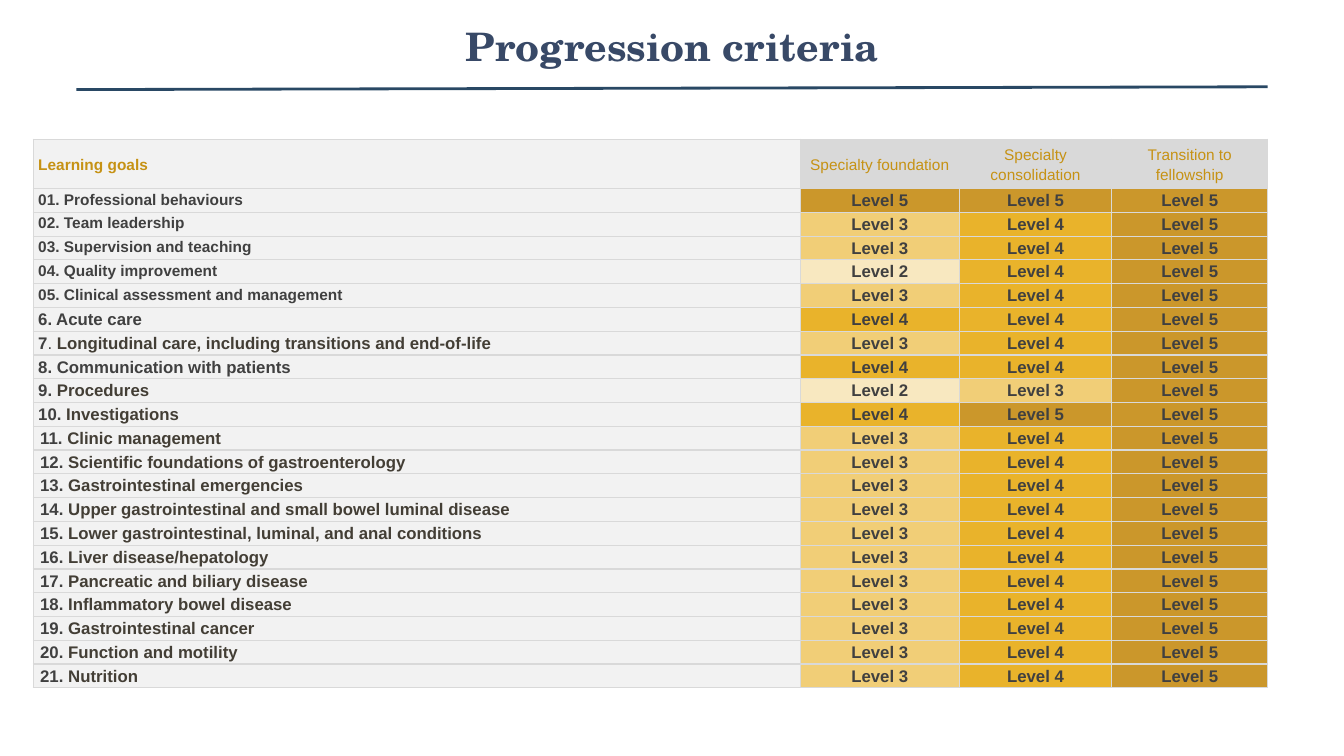
import dataclasses

import pptx
import pptx.dml.color
import pptx.enum.shapes
import pptx.enum.text
import pptx.oxml.ns
import pptx.util
from lxml import etree

Pt = pptx.util.Pt
ALIGN = pptx.enum.text.PP_ALIGN
ANCHOR = pptx.enum.text.MSO_ANCHOR
qn = pptx.oxml.ns.qn


@dataclasses.dataclass(frozen=True)
class Theme:
    title_font: str = "TeX Gyre Schola"
    body_font: str = "Arial"
    title_size: int = 28
    small_size: int = 11
    body_size: int = 12
    title: str = "384967"
    rule: str = "294864"
    gold: str = "C69214"
    dark: str = "404040"
    brown: str = "433E35"
    goal_fill: str = "F2F2F2"
    grey: str = "D9D9D9"
    level_fills: tuple = (None, None, "F8E8C0", "F1CE77", "E9B32B", "CB972B")


THEME = Theme()

STAGES = ["Specialty foundation", "Specialty consolidation", "Transition to fellowship"]
COLUMN_WIDTHS = [547.9, 113.8, 108.7, 111.6]
HEADER_HEIGHT = 35.3
ROW_HEIGHT = 17

GOALS = [
    ("01.", "Professional behaviours", (5, 5, 5)),
    ("02.", "Team leadership", (3, 4, 5)),
    ("03.", "Supervision and teaching", (3, 4, 5)),
    ("04.", "Quality improvement", (2, 4, 5)),
    ("05.", "Clinical assessment and management", (3, 4, 5)),
    ("6.", "Acute care", (4, 4, 5)),
    ("7.", "Longitudinal care, including transitions and end-of-life", (3, 4, 5)),
    ("8.", "Communication with patients", (4, 4, 5)),
    ("9.", "Procedures", (2, 3, 5)),
    ("10.", "Investigations", (4, 5, 5)),
    ("11.", "Clinic management", (3, 4, 5)),
    ("12.", "Scientific foundations of gastroenterology", (3, 4, 5)),
    ("13.", "Gastrointestinal emergencies", (3, 4, 5)),
    ("14.", "Upper gastrointestinal and small bowel luminal disease", (3, 4, 5)),
    ("15.", "Lower gastrointestinal, luminal, and anal conditions", (3, 4, 5)),
    ("16.", "Liver disease/hepatology", (3, 4, 5)),
    ("17.", "Pancreatic and biliary disease", (3, 4, 5)),
    ("18.", "Inflammatory bowel disease", (3, 4, 5)),
    ("19.", "Gastrointestinal cancer", (3, 4, 5)),
    ("20.", "Function and motility", (3, 4, 5)),
    ("21.", "Nutrition", (3, 4, 5)),
]


def rgb(value):
    return pptx.dml.color.RGBColor.from_string(value)


def style_font(font, name, size, bold):
    font.name = name
    font.size = Pt(size)
    font.bold = bold


def add_title(slide, text):
    title = slide.shapes.add_textbox(Pt(156), Pt(12.5), Pt(648), Pt(90))
    title.text_frame.word_wrap = True
    paragraph = title.text_frame.paragraphs[0]
    paragraph.text = text
    paragraph.alignment = ALIGN.CENTER
    style_font(paragraph.font, THEME.title_font, THEME.title_size, True)
    paragraph.font.color.rgb = rgb(THEME.title)


def add_rule(slide):
    rule = slide.shapes.add_connector(
        pptx.enum.shapes.MSO_CONNECTOR.STRAIGHT, Pt(54.5), Pt(64), Pt(905.5), Pt(62)
    )
    rule.line.color.rgb = rgb(THEME.rule)
    rule.line.width = Pt(2)
    etree.SubElement(rule._element.spPr, qn("a:effectLst"))


def add_borders(cell):
    properties = cell._tc.get_or_add_tcPr()
    for side in ("a:lnL", "a:lnR", "a:lnT", "a:lnB"):
        border = etree.SubElement(properties, qn(side), w=str(Pt(1)))
        fill = etree.SubElement(border, qn("a:solidFill"))
        etree.SubElement(fill, qn("a:srgbClr"), val=THEME.grey)


def fill_cell(cell, fill, parts, size, bold=True, align=ALIGN.LEFT,
              anchor=ANCHOR.TOP, inset=3.6):
    add_borders(cell)
    cell.fill.solid()
    cell.fill.fore_color.rgb = rgb(fill)
    cell.margin_left = cell.margin_right = Pt(inset)
    cell.margin_top = cell.margin_bottom = Pt(0)
    cell.vertical_anchor = anchor
    paragraph = cell.text_frame.paragraphs[0]
    paragraph.alignment = align
    paragraph.line_spacing = 1.15
    style_font(paragraph.font, THEME.body_font, size, bold)
    for text, color in parts:
        run = paragraph.add_run()
        run.text = text
        run.font.color.rgb = rgb(color)
    return paragraph


def fill_header(table):
    fill_cell(table.cell(0, 0), THEME.goal_fill, [("Learning goals", THEME.gold)],
              THEME.small_size, anchor=ANCHOR.MIDDLE)
    for column, stage in enumerate(STAGES, 1):
        fill_cell(table.cell(0, column), THEME.grey, [(stage, THEME.gold)],
                  THEME.small_size, False, ALIGN.CENTER, ANCHOR.MIDDLE)


def fill_goal(table, row, number, goal, levels):
    size = THEME.small_size if row <= 5 else THEME.body_size
    goal_color = THEME.brown if row == 7 or row >= 9 else THEME.dark
    inset = 5 if row >= 11 else 3.6
    if row == 7:
        parts = [("7", THEME.dark), (". ", THEME.dark), (goal, goal_color)]
    else:
        parts = [(number + " ", THEME.dark), (goal, goal_color)]
    paragraph = fill_cell(table.cell(row, 0), THEME.goal_fill, parts, size, inset=inset)
    if row == 7:
        paragraph.runs[1].font.bold = False
    for column, level in enumerate(levels, 1):
        fill_cell(table.cell(row, column), THEME.level_fills[level],
                  [(f"Level {level}", THEME.dark)], THEME.body_size, align=ALIGN.CENTER)


def add_criteria(slide):
    height = HEADER_HEIGHT + ROW_HEIGHT * len(GOALS)
    table = slide.shapes.add_table(
        len(GOALS) + 1, len(COLUMN_WIDTHS),
        Pt(23.7), Pt(99.4), Pt(sum(COLUMN_WIDTHS)), Pt(height)
    ).table
    table.first_row = False
    table.horz_banding = False
    for column, width in zip(table.columns, COLUMN_WIDTHS):
        column.width = Pt(width)
    for index, row in enumerate(table.rows):
        row.height = Pt(ROW_HEIGHT if index else HEADER_HEIGHT)
    fill_header(table)
    for row, (number, goal, levels) in enumerate(GOALS, 1):
        fill_goal(table, row, number, goal, levels)


def main():
    deck = pptx.Presentation()
    deck.slide_width = Pt(960)
    deck.slide_height = Pt(540)
    slide = deck.slides.add_slide(deck.slide_layouts[6])
    add_title(slide, "Progression criteria")
    add_rule(slide)
    add_criteria(slide)
    deck.save("out.pptx")


if __name__ == "__main__":
    main()
